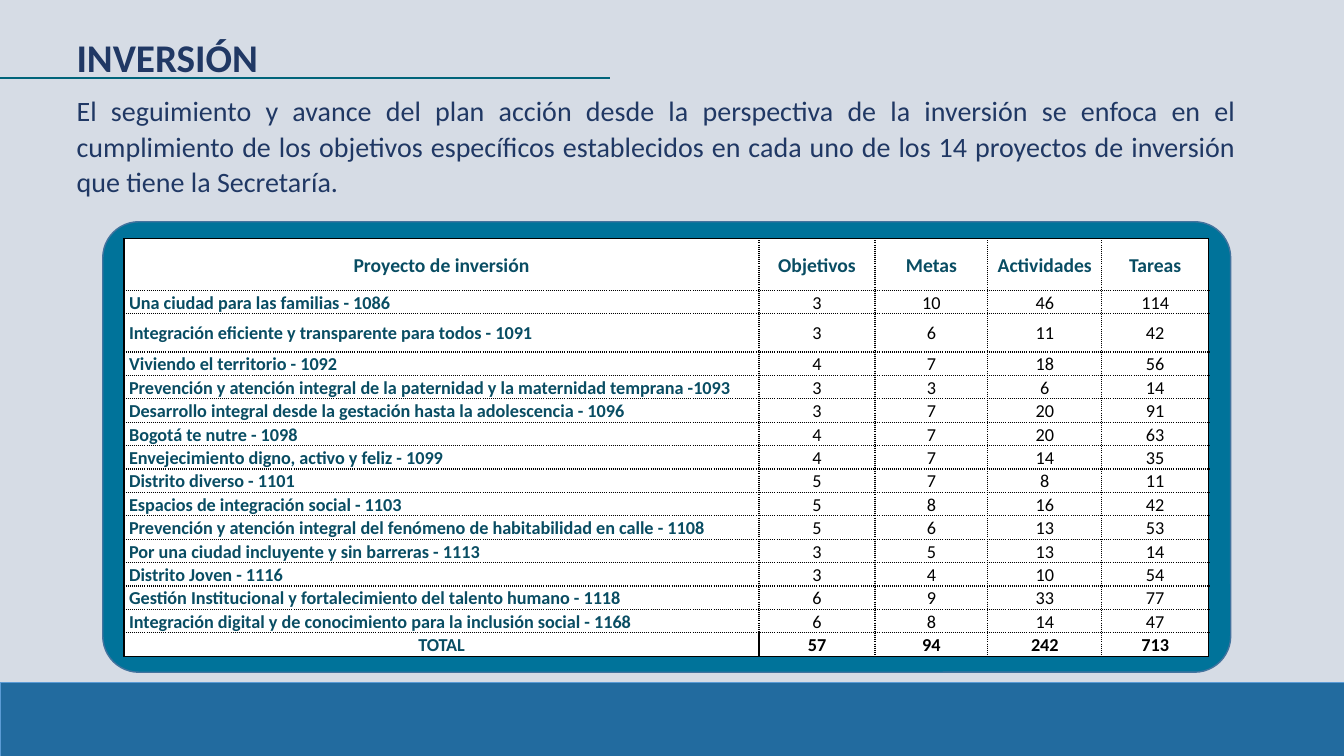
"""Build the INVERSIÓN slide with its table of investment projects."""
from lxml import etree
from pptx import Presentation
from pptx import util as u
from pptx.dml import color
from pptx.enum import shapes, text
from pptx.oxml import ns

COLORS = {
    "background": "D6DCE5", "band": "226B9F", "band_line": "5B9BD5",
    "panel": "00739A", "panel_line": "43739E", "rule": "00647A",
    "heading": "203864", "label": "094D63", "figure": "000000",
    "cell": "FFFFFF", "border": "000000",
}
ALIGN = text.PP_ALIGN
INTRO = (
    "El seguimiento y avance del plan acción desde la perspectiva de la inversión "
    "se enfoca en el cumplimiento de los objetivos específicos establecidos en cada "
    "uno de los 14 proyectos de inversión que tiene la Secretaría."
)
PROJECTS = [
    ("Proyecto de inversión", "Objetivos", "Metas", "Actividades", "Tareas"),
    ("Una ciudad para las familias - 1086", 3, 10, 46, 114),
    ("Integración eficiente y transparente para todos - 1091", 3, 6, 11, 42),
    ("Viviendo el territorio - 1092", 4, 7, 18, 56),
    ("Prevención y atención integral de la paternidad y la maternidad temprana -1093", 3, 3, 6, 14),
    ("Desarrollo integral desde la gestación hasta la adolescencia - 1096", 3, 7, 20, 91),
    ("Bogotá te nutre - 1098", 4, 7, 20, 63),
    ("Envejecimiento digno, activo y feliz - 1099", 4, 7, 14, 35),
    ("Distrito diverso - 1101", 5, 7, 8, 11),
    ("Espacios de integración social - 1103", 5, 8, 16, 42),
    ("Prevención y atención integral del fenómeno de habitabilidad en calle - 1108", 5, 6, 13, 53),
    ("Por una ciudad incluyente y sin barreras - 1113", 3, 5, 13, 14),
    ("Distrito Joven - 1116", 3, 4, 10, 54),
    ("Gestión Institucional y fortalecimiento del talento humano - 1118", 6, 9, 33, 77),
    ("Integración digital y de conocimiento para la inclusión social - 1168", 6, 8, 14, 47),
    ("TOTAL", 57, 94, 242, 713),
]
COLUMN_WIDTHS = [453.6, 82.8, 80.6, 81.4, 76.3]
ROW_HEIGHT = 16.7
TALL_ROWS = {0: 36.7, 2: 27.4}


def rgb(name):
    return color.RGBColor.from_string(COLORS[name])


def apply(target, values):
    for attribute, value in values.items():
        setattr(target, attribute, value)


def place(item, left, top, width, height):
    apply(item, {"left": u.Pt(left), "top": u.Pt(top),
                 "width": u.Pt(width), "height": u.Pt(height)})


def write(paragraph, words, size, tint, bold, align, spacing):
    paragraph.text = words
    apply(paragraph, {"alignment": align, "line_spacing": spacing,
                      "space_before": u.Pt(0)})
    apply(paragraph.font, {"name": "Calibri", "size": u.Pt(size), "bold": bold})
    paragraph.font.color.rgb = rgb(tint)


def fill_placeholder(holder, box, words, size, bold, spacing):
    place(holder, *box)
    apply(holder.text_frame, {
        "word_wrap": True, "vertical_anchor": text.MSO_ANCHOR.TOP,
        "auto_size": text.MSO_AUTO_SIZE.SHAPE_TO_FIT_TEXT})
    paragraph = holder.text_frame.paragraphs[0]
    properties = paragraph._p.get_or_add_pPr()
    apply_indent = {"marL": "0", "indent": "0"}
    for key, value in apply_indent.items():
        properties.set(key, value)
    etree.SubElement(properties, ns.qn("a:buNone"))
    write(paragraph, words, size, "heading", bold, ALIGN.JUSTIFY, spacing)


def add_block(slide, kind, box, fill, line, weight):
    block = slide.shapes.add_shape(kind, *map(u.Pt, box))
    block.shadow.inherit = False
    block.fill.solid()
    block.fill.fore_color.rgb = rgb(fill)
    block.line.color.rgb = rgb(line)
    block.line.width = u.Pt(weight)
    return block


def add_rule(slide, start, end):
    rule = slide.shapes.add_connector(shapes.MSO_CONNECTOR.STRAIGHT,
                                      *map(u.Pt, (*start, *end)))
    rule.line.color.rgb = rgb("rule")
    rule.line.width = u.Pt(1.5)
    etree.SubElement(rule._element.spPr, ns.qn("a:effectLst"))


def set_borders(cell, solid_sides):
    properties = cell._tc.get_or_add_tcPr()
    for side in "LRTB":
        edge = etree.SubElement(properties, ns.qn(f"a:ln{side}"), w=str(u.Pt(1)))
        fill = etree.SubElement(edge, ns.qn("a:solidFill"))
        etree.SubElement(fill, ns.qn("a:srgbClr"), val=COLORS["border"])
        dash = "solid" if side in solid_sides else "sysDot"
        etree.SubElement(edge, ns.qn("a:prstDash"), val=dash)


def solid_sides(row, column):
    last_row, last_column = len(PROJECTS) - 1, len(COLUMN_WIDTHS) - 1
    total = row == last_row
    rules = {
        "L": column == 0 or (total and column == 1),
        "R": column == last_column or (total and column == 0),
        "T": row == 0,
        "B": total,
    }
    return {side for side, solid in rules.items() if solid}


def add_project_table(slide, left, top):
    heights = [TALL_ROWS.get(row, ROW_HEIGHT) for row in range(len(PROJECTS))]
    box = (left, top, sum(COLUMN_WIDTHS), sum(heights))
    table = slide.shapes.add_table(len(PROJECTS), len(COLUMN_WIDTHS),
                                   *map(u.Pt, box)).table
    apply(table, {"first_row": False, "horz_banding": False})
    for column, width in zip(table.columns, COLUMN_WIDTHS):
        column.width = u.Pt(width)
    for row, (project, height) in enumerate(zip(PROJECTS, heights)):
        table.rows[row].height = u.Pt(height)
        header, total = row == 0, row == len(PROJECTS) - 1
        for column, value in enumerate(project):
            cell = table.cell(row, column)
            label = header or column == 0
            name = column == 0 and not header and not total
            apply(cell, {"margin_left": u.Pt(3.6), "margin_right": u.Pt(3.6),
                         "margin_top": 0, "margin_bottom": 0,
                         "vertical_anchor": text.MSO_ANCHOR.MIDDLE})
            set_borders(cell, solid_sides(row, column))
            cell.fill.solid()
            cell.fill.fore_color.rgb = rgb("cell")
            write(cell.text_frame.paragraphs[0], str(value), 14 if header else 13,
                  "label" if label else "figure", label or total,
                  ALIGN.LEFT if name else ALIGN.CENTER, 1.07)


def main():
    deck = Presentation()
    apply(deck, {"slide_width": u.Pt(960), "slide_height": u.Pt(540)})
    slide = deck.slides.add_slide(deck.slide_layouts[1])
    slide.background.fill.solid()
    slide.background.fill.fore_color.rgb = rgb("background")
    title, intro = slide.placeholders
    fill_placeholder(title, (47.5, 20.2, 769.7, 41), "INVERSIÓN", 28, True, 1.0)
    fill_placeholder(intro, (47.5, 61.2, 842.4, 84.2), INTRO, 20, False, 1.07)
    add_block(slide, shapes.MSO_SHAPE.RECTANGLE, (0, 487.4, 960, 52.6),
              "band", "band_line", 0.5)
    panel = add_block(slide, shapes.MSO_SHAPE.ROUNDED_RECTANGLE,
                      (73.4, 158.4, 805.7, 321.8), "panel", "panel_line", 1)
    panel.adjustments[0] = 0.08
    add_project_table(slide, 88.6, 170.6)
    add_rule(slide, (0, 55.8), (435.6, 55.8))
    deck.save("out.pptx")


if __name__ == "__main__":
    main()
